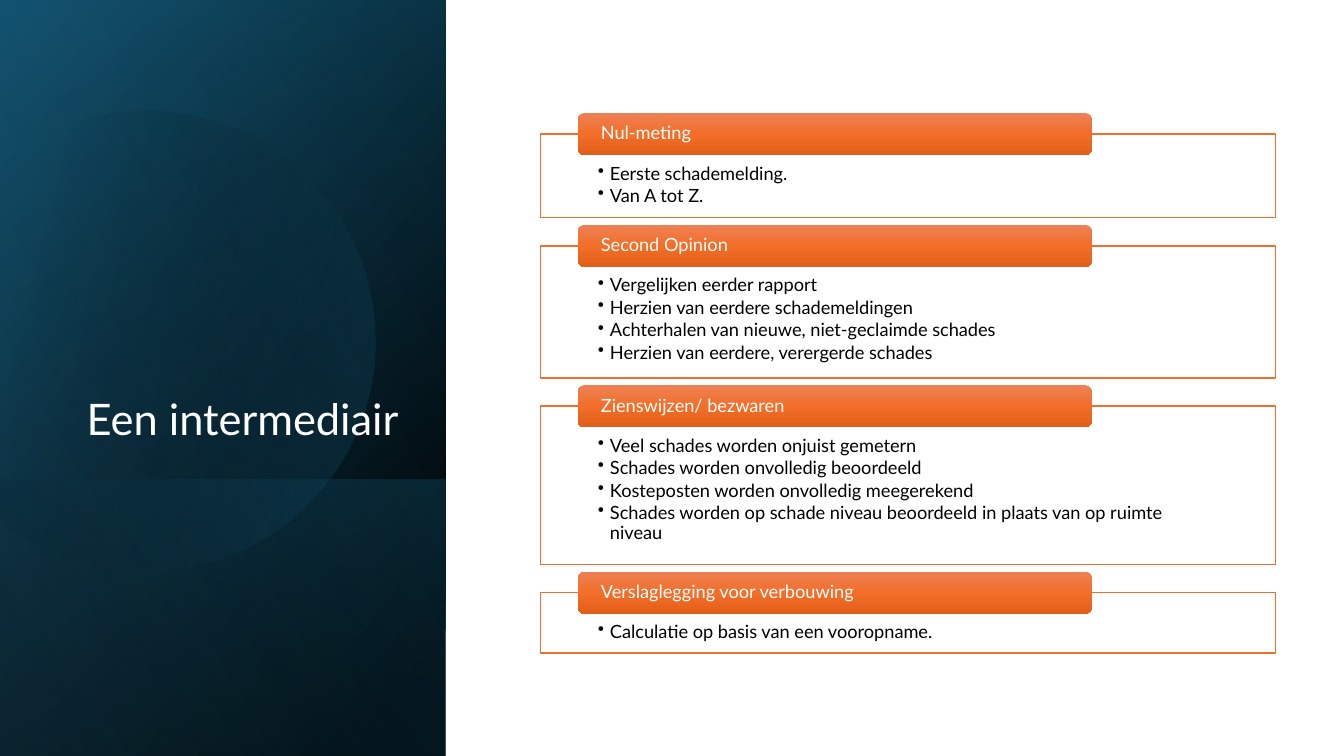
from dataclasses import dataclass
from math import cos, radians, sin

from lxml import etree
from pptx import Presentation
from pptx.dml.color import RGBColor
from pptx.enum.shapes import MSO_SHAPE
from pptx.enum.text import MSO_ANCHOR, MSO_AUTO_SIZE, PP_ALIGN
from pptx.oxml.ns import qn
from pptx.util import Inches, Pt

RECTANGLE = MSO_SHAPE.RECTANGLE
ROUNDED = MSO_SHAPE.ROUNDED_RECTANGLE
BLACK = RGBColor(0x00, 0x00, 0x00)
WHITE = RGBColor(0xFF, 0xFF, 0xFF)
DEEP_BLUE = RGBColor(0x10, 0x48, 0x62)
TEAL = RGBColor(0x15, 0x60, 0x82)
SKY = RGBColor(0x46, 0xB1, 0xE1)
ORANGE = RGBColor(0xE9, 0x71, 0x32)
TAB_TOP = RGBColor(0xED, 0x82, 0x57)
TAB_MIDDLE = RGBColor(0xF2, 0x6E, 0x29)
TAB_BOTTOM = RGBColor(0xE2, 0x5F, 0x1A)
FONT = "Lato"
GAP = 0.28
TAB_HEIGHT = 0.42


@dataclass
class Stop:
    position: int
    color: RGBColor
    opacity: int = 100


@dataclass
class Layer:
    left: float
    top: float
    width: float
    stops: list[Stop]
    angle: int


@dataclass
class Topic:
    heading: str
    height: float
    points: list[str]


BASE_LAYERS = [
    Layer(-1.54, 1.54, 7.5, [Stop(8, BLACK), Stop(100, DEEP_BLUE)], 50),
    Layer(-1.54, 1.55, 7.5, [Stop(0, BLACK, 0), Stop(99, TEAL, 46)], 30),
    Layer(0.84, 3.92, 2.74, [Stop(2, TEAL, 29), Stop(100, BLACK, 30)], 130),
]
SHEEN = Layer(-1.54, 1.54, 7.5, [Stop(0, BLACK, 0), Stop(99, SKY, 11)], 120)
DISC_STOPS = [Stop(29, BLACK, 0), Stop(100, TEAL, 43)]
TAB_STOPS = [Stop(0, TAB_TOP), Stop(50, TAB_MIDDLE), Stop(100, TAB_BOTTOM)]

# Disc outline: each segment is a straight line (2 points) or a cubic curve (4)
DISC_CENTER = (1.585, 3.345)
DISC_ROTATION = -16.1
DISC_SEGMENTS = [
    [(1.49, 1.1), (2.46, 1.12), (3.35, 1.77), (3.63, 2.75)],
    [(3.63, 2.75), (3.98, 3.97), (3.28, 5.23), (2.07, 5.58)],
    [(2.07, 5.58), (1.31, 5.8), (0.53, 5.61), (-0.03, 5.14)],
    [(-0.03, 5.14), (-0.15, 5.03)],
    [(-0.15, 5.03), (-0.15, 1.75)],
    [(-0.15, 1.75), (0, 1.61)],
    [(0, 1.61), (0.23, 1.42), (0.5, 1.28), (0.8, 1.19)],
    [(0.8, 1.19), (1.03, 1.13), (1.26, 1.1), (1.49, 1.1)],
]

TOPICS = [
    Topic("Nul-meting", 0.83, ["Eerste schademelding.", "Van A tot Z."]),
    Topic("Second Opinion", 1.31, [
        "Vergelijken eerder rapport",
        "Herzien van eerdere schademeldingen",
        "Achterhalen van nieuwe, niet-geclaimde schades",
        "Herzien van eerdere, verergerde schades",
    ]),
    Topic("Zienswijzen/ bezwaren", 1.57, [
        "Veel schades worden onjuist gemetern",
        "Schades worden onvolledig beoordeeld",
        "Kosteposten worden onvolledig meegerekend",
        "Schades worden op schade niveau beoordeeld in plaats van op ruimte niveau",
    ]),
    Topic("Verslaglegging voor verbouwing", 0.6,
          ["Calculatie op basis van een vooropname."]),
]


def fill_gradient(shape, stops: list[Stop], angle: int) -> None:
    shape.fill.background()
    properties = shape._element.spPr
    gradient = etree.Element(qn("a:gradFill"), rotWithShape="1")
    stop_list = etree.SubElement(gradient, qn("a:gsLst"))
    for stop in stops:
        entry = etree.SubElement(stop_list, qn("a:gs"), pos=str(stop.position * 1000))
        color = etree.SubElement(entry, qn("a:srgbClr"), val=str(stop.color))
        if stop.opacity < 100:
            etree.SubElement(color, qn("a:alpha"), val=str(stop.opacity * 1000))
    etree.SubElement(gradient, qn("a:lin"), ang=str(angle * 60000), scaled="0")
    properties.replace(properties.find(qn("a:noFill")), gradient)


def add_box(slide, kind, left: float, top: float, width: float, height: float):
    box = slide.shapes.add_shape(kind, Inches(left), Inches(top),
                                 Inches(width), Inches(height))
    box.shadow.inherit = False
    box.line.fill.background()
    return box


def add_layer(slide, layer: Layer) -> None:
    panel = add_box(slide, RECTANGLE, layer.left, layer.top, layer.width, 4.42)
    panel.rotation = 90
    panel._element.spPr.find(qn("a:xfrm")).set("flipH", "1")
    fill_gradient(panel, layer.stops, layer.angle)


def segment_points(segment: list[tuple], steps: int = 16) -> list[tuple]:
    if len(segment) == 2:
        return segment[1:]
    points = []
    for step in range(1, steps + 1):
        t = step / steps
        weights = ((1 - t) ** 3, 3 * t * (1 - t) ** 2, 3 * t * t * (1 - t), t ** 3)
        points.append(tuple(sum(w * p[axis] for w, p in zip(weights, segment))
                            for axis in (0, 1)))
    return points


def unrotate(point: tuple) -> tuple:
    turn = radians(-DISC_ROTATION)
    center_x, center_y = DISC_CENTER
    x, y = point[0] - center_x, point[1] - center_y
    return (Inches(center_x + x * cos(turn) - y * sin(turn)),
            Inches(center_y + x * sin(turn) + y * cos(turn)))


def add_disc(slide) -> None:
    outline = [unrotate(p) for s in DISC_SEGMENTS for p in segment_points(s)]
    builder = slide.shapes.build_freeform(*outline[-1])
    builder.add_line_segments(outline, close=True)
    disc = builder.convert_to_shape()
    disc.rotation = DISC_ROTATION
    disc.shadow.inherit = False
    disc.line.fill.background()
    fill_gradient(disc, DISC_STOPS, 30)


def style_text(paragraph, text: str, size: int, color: RGBColor, align) -> None:
    paragraph.text = text
    paragraph.alignment = align
    paragraph.line_spacing = 0.9
    paragraph.font.name = FONT
    paragraph.font.size = Pt(size)
    paragraph.font.color.rgb = color


def set_frame(frame, anchor, side: float, top: float, bottom: float) -> None:
    frame.word_wrap = True
    frame.vertical_anchor = anchor
    frame.margin_left = frame.margin_right = Inches(side)
    frame.margin_top, frame.margin_bottom = Inches(top), Inches(bottom)


def add_topic(slide, topic: Topic, top: float) -> None:
    # Outlined box with bullets
    details = add_box(slide, RECTANGLE, 5.36, top, 7.29, topic.height)
    details.fill.solid()
    details.fill.fore_color.rgb = WHITE
    details.line.color.rgb = ORANGE
    details.line.width = Pt(1)
    frame = details.text_frame
    set_frame(frame, MSO_ANCHOR.TOP, 0.57, 0.3, 0.1)
    for index, point in enumerate(topic.points):
        paragraph = frame.add_paragraph() if index else frame.paragraphs[0]
        style_text(paragraph, point, 13, BLACK, PP_ALIGN.LEFT)
        paragraph.space_after = Pt(2)
        paragraph.level = 1
        properties = paragraph._p.get_or_add_pPr()
        properties.set("marL", str(Inches(0.12)))
        properties.set("indent", str(Inches(-0.12)))
        bullet = etree.Element(qn("a:buChar"), char="•")
        properties.find(qn("a:defRPr")).addprevious(bullet)

    # Heading tab centred on the top edge
    heading = add_box(slide, ROUNDED, 5.73, top - TAB_HEIGHT / 2, 5.1, TAB_HEIGHT)
    fill_gradient(heading, TAB_STOPS, 90)
    set_frame(heading.text_frame, MSO_ANCHOR.MIDDLE, 0.21, 0, 0)
    style_text(heading.text_frame.paragraphs[0], topic.heading, 13, WHITE, PP_ALIGN.LEFT)


def main() -> None:
    deck = Presentation()
    deck.slide_width, deck.slide_height = Inches(13.33), Inches(7.5)
    slide = deck.slides.add_slide(deck.slide_layouts[5])

    # Blue side panel
    for layer in BASE_LAYERS:
        add_layer(slide, layer)
    add_disc(slide)
    add_layer(slide, SHEEN)

    # Title, brought in front of the panel
    title = slide.shapes.title
    slide.shapes._spTree.append(title._element)
    title.left, title.top = Inches(0.64), Inches(1.84)
    title.width, title.height = Inches(3.41), Inches(2.62)
    set_frame(title.text_frame, MSO_ANCHOR.BOTTOM, 0.1, 0.05, 0.05)
    title.text_frame.auto_size = MSO_AUTO_SIZE.NONE
    style_text(title.text_frame.paragraphs[0], "Een intermediair", 31, WHITE, PP_ALIGN.RIGHT)

    # Topics stacked with equal gaps
    top = 1.33
    for topic in TOPICS:
        add_topic(slide, topic, top)
        top += topic.height + GAP

    deck.save("out.pptx")


if __name__ == "__main__":
    main()
